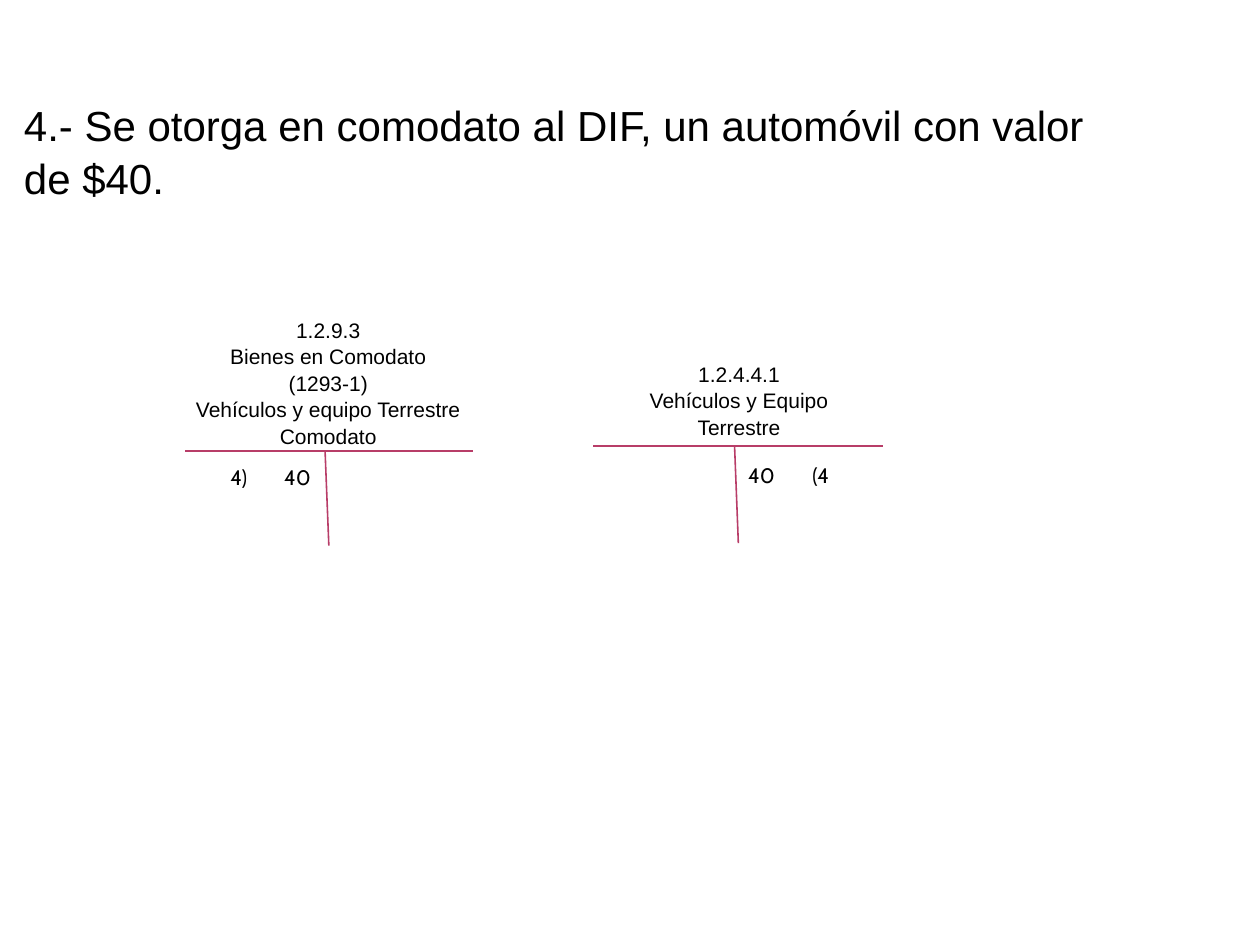
from dataclasses import dataclass

from lxml.etree import SubElement
from pptx import Presentation
from pptx.dml.color import RGBColor
from pptx.enum.shapes import MSO_CONNECTOR
from pptx.enum.text import MSO_ANCHOR, MSO_AUTO_SIZE, PP_ALIGN
from pptx.oxml.ns import qn
from pptx.util import Inches, Pt


@dataclass(frozen=True)
class Theme:
    ink: RGBColor = RGBColor(0, 0, 0)
    rule: RGBColor = RGBColor(0xB8, 0x3D, 0x68)
    sans: str = "Arial"
    hand: str = "Cabin"
    head: float = 24
    body: float = 12
    line: float = 0.9
    lead: float = 1.05


THEME = Theme()
WIDE, HIGH = Inches(10), Inches(7.5)
COLS, ROWS = 100, 75


def col(num):
    return round(WIDE * num / COLS)


def row(num):
    return round(HIGH * num / ROWS)


def place(shape, left, top, width, height):
    shape.left, shape.top = col(left), row(top)
    shape.width, shape.height = col(width), row(height)


def style(frame, face, size, align):
    for para in frame.paragraphs:
        para.alignment = align
        para.line_spacing = THEME.lead
        for run in para.runs:
            run.font.name = face
            run.font.size = Pt(size)
            run.font.color.rgb = THEME.ink


def add_title(slide, text, area):
    title = slide.shapes.title
    place(title, *area)
    frame = title.text_frame
    frame.text = text
    frame.word_wrap = True
    frame.auto_size = MSO_AUTO_SIZE.NONE
    frame.vertical_anchor = MSO_ANCHOR.TOP
    style(frame, THEME.sans, THEME.head, PP_ALIGN.LEFT)


def add_text(slide, text, area, face, align, stops=()):
    box = slide.shapes.add_textbox(0, 0, 0, 0)
    place(box, *area)
    frame = box.text_frame
    frame.word_wrap = True
    frame.text = text
    if stops:
        props = frame.paragraphs[0]._p.get_or_add_pPr()
        tabs = SubElement(props, qn("a:tabLst"))
        for stop, side in stops:
            SubElement(tabs, qn("a:tab"), pos=str(col(stop)), algn=side)
    style(frame, face, THEME.body, align)


def add_rule(group, start, end):
    rule = group.shapes.add_connector(
        MSO_CONNECTOR.STRAIGHT,
        col(start[0]), row(start[1]), col(end[0]), row(end[1]),
    )
    rule.line.color.rgb = THEME.rule
    rule.line.width = Pt(THEME.line)
    SubElement(rule._element.spPr, qn("a:effectLst"))


def add_tee(slide, left, right, top, stem, foot):
    group = slide.shapes.add_group_shape()
    add_rule(group, (left, top), (right, top))
    add_rule(group, (stem, top), (stem + 0.3, foot))


def main():
    deck = Presentation()
    deck.slide_width, deck.slide_height = WIDE, HIGH
    slide = deck.slides.add_slide(deck.slide_layouts[5])

    add_title(
        slide,
        "4.- Se otorga en comodato al DIF, un automóvil con valor de $40.",
        (0.9, 7.2, 87.3, 13.1),
    )
    add_tee(slide, 14.7, 37.5, 35.8, 25.8, 43.3)
    add_tee(slide, 47.1, 70.1, 35.4, 58.3, 43.1)

    loan = ["1.2.9.3", "Bienes en Comodato", "(1293-1)",
            "Vehículos y equipo Terrestre", "Comodato"]
    fleet = ["1.2.4.4.1", "Vehículos y Equipo", "Terrestre"]
    for names, area in (
        (loan, (14.1, 24.6, 23.9, 11.1)),
        (fleet, (48.4, 28.1, 20.5, 7.1)),
    ):
        add_text(slide, "\n".join(names), area, THEME.sans, PP_ALIGN.CENTER)

    for text, area, stops in (
        ("\t4)\t40", (9.3, 36.3, 16.4, 5), ((8, "l"), (14.4, "r"))),
        ("40\t(4", (58.4, 36.1, 16.4, 5), ((5.1, "l"),)),
    ):
        add_text(slide, text, area, THEME.hand, PP_ALIGN.LEFT, stops)

    deck.save("out.pptx")


if __name__ == "__main__":
    main()
